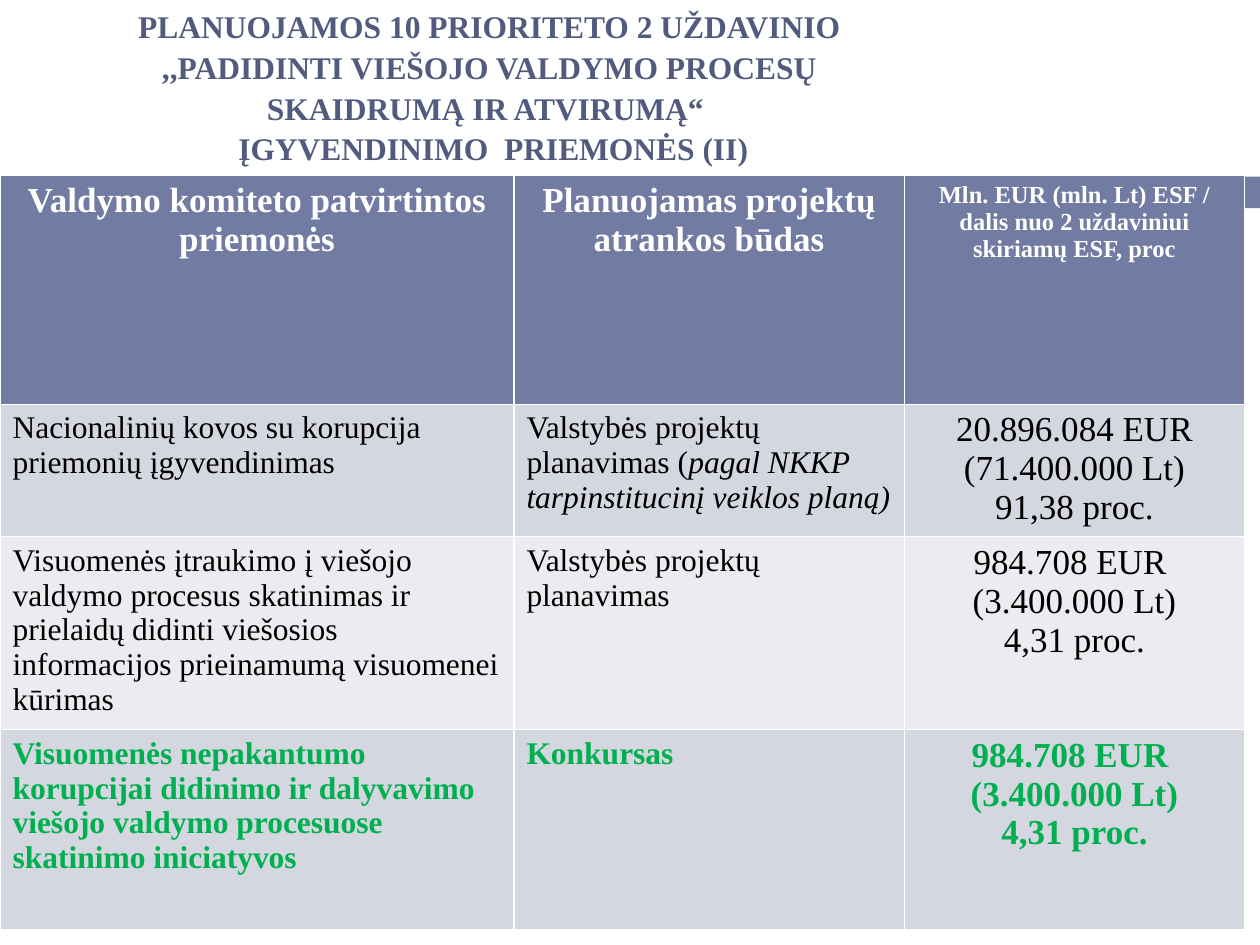
from pptx import Presentation
from pptx.dml.color import RGBColor
from pptx.enum.shapes import MSO_SHAPE
from pptx.enum.text import MSO_ANCHOR, PP_ALIGN
from pptx.util import Cm, Pt

RECTANGLE = MSO_SHAPE.RECTANGLE
MIDDLE = MSO_ANCHOR.MIDDLE
CENTER, LEFT = PP_ALIGN.CENTER, PP_ALIGN.LEFT

WHITE = RGBColor(0xFF, 0xFF, 0xFF)
BLACK = RGBColor(0x00, 0x00, 0x00)
GREEN = RGBColor(0x00, 0xB0, 0x50)
SLATE = RGBColor(0x72, 0x7C, 0xA3)
DARK_SLATE = RGBColor(0x52, 0x5B, 0x7E)
BAND_DARK = RGBColor(0xD5, 0xD7, 0xE0)
BAND_LIGHT = RGBColor(0xEB, 0xEC, 0xF0)

TITLE_LINES = [
    "PLANUOJAMOS 10 PRIORITETO 2 UŽDAVINIO ",
    ",,PADIDINTI VIEŠOJO VALDYMO PROCESŲ ",
    "SKAIDRUMĄ IR ATVIRUMĄ“  ",
    "ĮGYVENDINIMO  PRIEMONĖS (II)",
]
COLUMN_WIDTHS = [10.36, 7.87, 6.86]
ROW_HEIGHTS = [4.62, 2.67, 3.89, 4.04]
HEADERS = [
    ("Valdymo komiteto patvirtintos priemonės", 20),
    ("Planuojamas projektų atrankos būdas", 20),
    ("Mln. EUR (mln. Lt) ESF / dalis nuo 2 uždaviniui skiriamų ESF, proc", 14),
]
SMALL_SHARE = ["984.708 EUR ", "(3.400.000 Lt)", "4,31 proc."]

# Each row: measure, selection method, italic remark, amounts, fill, text format
MEASURES = [
    ("Nacionalinių kovos su korupcija priemonių įgyvendinimas",
     "Valstybės projektų planavimas (",
     "pagal NKKP tarpinstitucinį veiklos planą)",
     ["20.896.084 EUR (71.400.000 Lt)", "91,38 proc."],
     BAND_DARK, {"color": BLACK, "bold": False}),
    ("Visuomenės įtraukimo į viešojo valdymo procesus skatinimas ir prielaidų "
     "didinti viešosios informacijos prieinamumą visuomenei kūrimas",
     "Valstybės projektų planavimas", "", SMALL_SHARE,
     BAND_LIGHT, {"color": BLACK, "bold": False}),
    ("Visuomenės nepakantumo korupcijai didinimo ir dalyvavimo viešojo "
     "valdymo procesuose skatinimo iniciatyvos",
     "Konkursas", "", SMALL_SHARE,
     BAND_DARK, {"color": GREEN, "bold": True}),
]


class SlideBuilder:
    font_name = "Times New Roman"

    def __init__(self, slide):
        self.slide = slide

    def add_run(self, paragraph, text, size, color, **style):
        run = paragraph.add_run()
        run.text = text
        values = {"name": self.font_name, "size": Pt(size), **style}
        for attribute, value in values.items():
            setattr(run.font, attribute, value)
        run.font.color.rgb = color

    def title(self, lines, left, top, width, height):
        shape = self.slide.shapes.title
        box = {"left": left, "top": top, "width": width, "height": height}
        for attribute, value in box.items():
            setattr(shape, attribute, Cm(value))
        shape.text_frame.vertical_anchor = MIDDLE
        paragraph = shape.text_frame.paragraphs[0]
        paragraph.alignment = CENTER
        paragraph.line_spacing = 1.08
        for index, line in enumerate(lines):
            if index:
                paragraph.add_line_break()
            self.add_run(paragraph, line, 18, DARK_SLATE, bold=True)

    def bar(self, left, top, width, height, color):
        shape = self.slide.shapes.add_shape(
            RECTANGLE, Cm(left), Cm(top), Cm(width), Cm(height))
        shape.shadow.inherit = False
        shape.fill.solid()
        shape.fill.fore_color.rgb = color
        shape.line.fill.background()

    def table(self, left, top, widths, heights):
        frame = self.slide.shapes.add_table(
            len(heights), len(widths), Cm(left), Cm(top),
            Cm(sum(widths)), Cm(sum(heights)))
        for column, width in zip(frame.table.columns, widths):
            column.width = Cm(width)
        for row, height in zip(frame.table.rows, heights):
            row.height = Cm(height)
        return frame.table

    def cell(self, cell, lines, fill, size, alignment=LEFT, remark="", **style):
        cell.fill.solid()
        cell.fill.fore_color.rgb = fill
        frame = cell.text_frame
        for index, line in enumerate(lines):
            paragraph = frame.add_paragraph() if index else frame.paragraphs[0]
            paragraph.alignment = alignment
            self.add_run(paragraph, line, size, **style)
        if remark:
            self.add_run(paragraph, remark, size, italic=True, **style)


def main():
    presentation = Presentation()
    presentation.slide_width, presentation.slide_height = Cm(25.4), Cm(19.05)
    builder = SlideBuilder(
        presentation.slides.add_slide(presentation.slide_layouts[5]))

    # Title and the bar behind the table
    builder.title(TITLE_LINES, 0, 0.33, 19.89, 2.79)
    builder.bar(1.65, 3.56, 23.75, 0.64, SLATE)

    # Table of measures
    table = builder.table(0, 3.53, COLUMN_WIDTHS, ROW_HEIGHTS)
    for column, (text, size) in enumerate(HEADERS):
        builder.cell(table.cell(0, column), [text], SLATE, size, CENTER,
                     color=WHITE, bold=True)
    for row, (measure, method, remark, amounts, fill, style) in enumerate(MEASURES, 1):
        builder.cell(table.cell(row, 0), [measure], fill, 18, **style)
        builder.cell(table.cell(row, 1), [method], fill, 18, remark=remark, **style)
        builder.cell(table.cell(row, 2), amounts, fill, 20, CENTER, **style)

    presentation.save("out.pptx")


if __name__ == "__main__":
    main()
